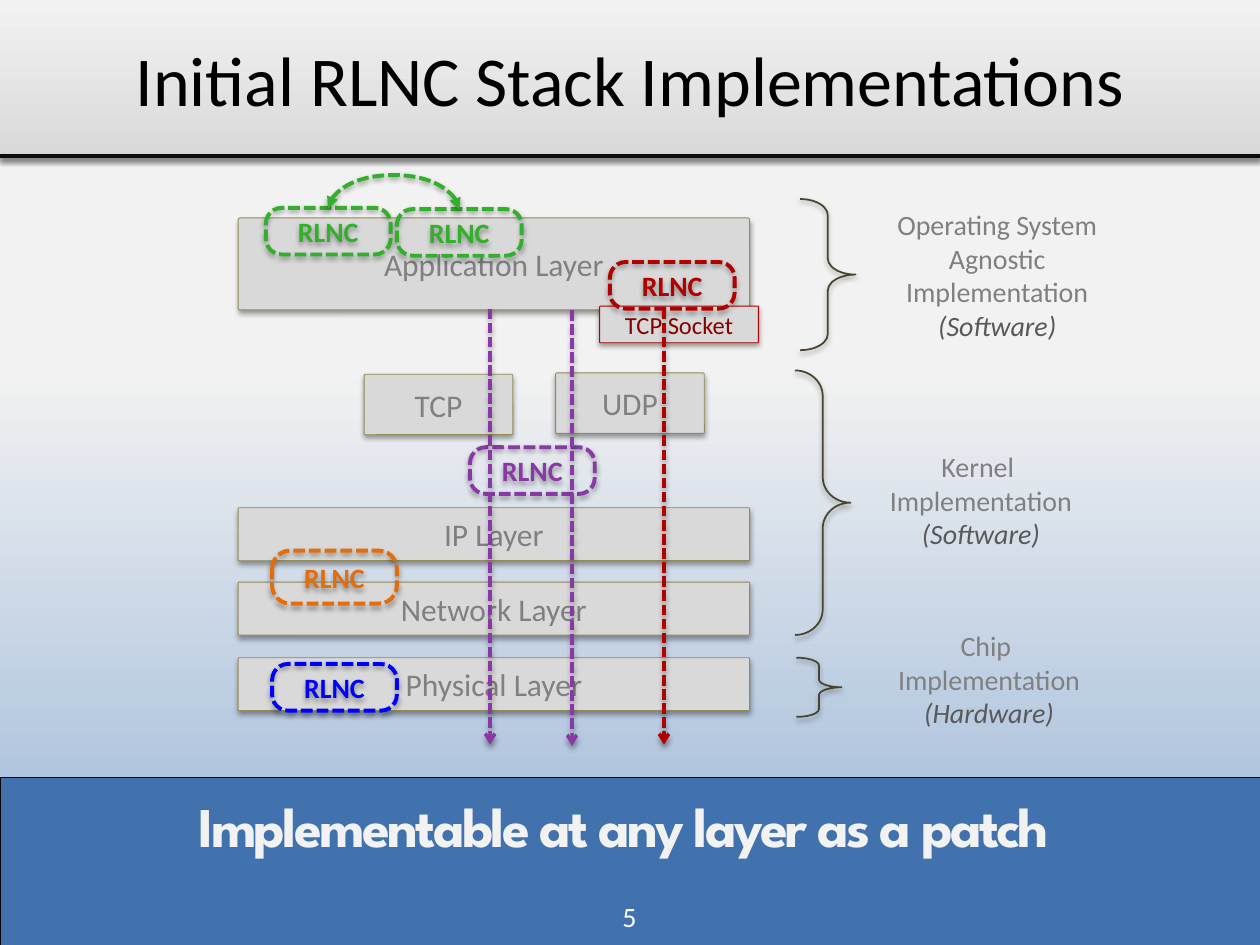
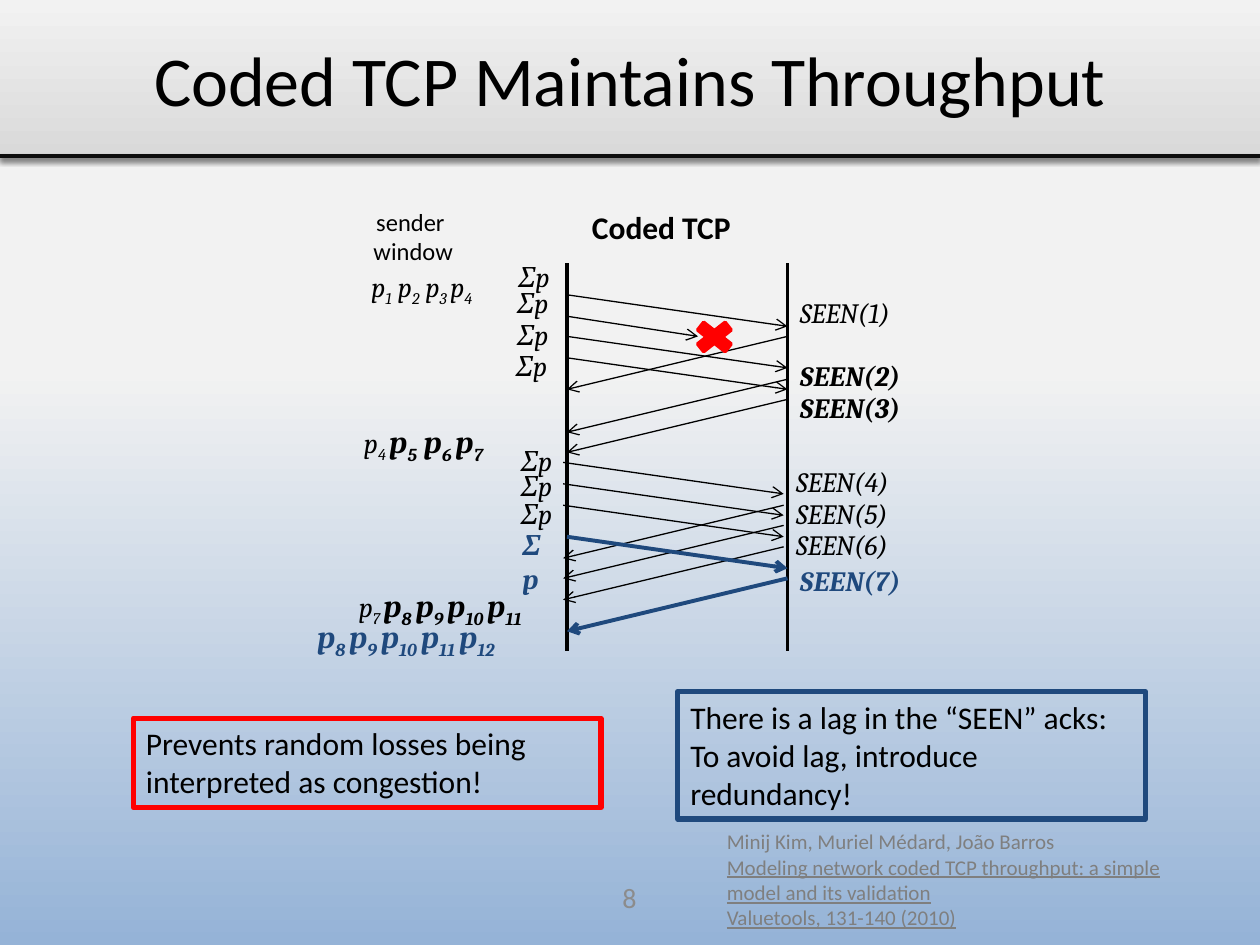
from dataclasses import dataclass

from lxml.etree import SubElement
from pptx import Presentation
from pptx.dml.color import RGBColor
from pptx.enum.dml import MSO_LINE
from pptx.enum.shapes import MSO_CONNECTOR, MSO_SHAPE
from pptx.enum.text import MSO_ANCHOR, PP_ALIGN
from pptx.oxml.ns import qn
from pptx.util import Inches, Pt


@dataclass(frozen=True)
class Theme:
    black: str = "000000"
    white: str = "FFFFFF"
    light: str = "F2F2F2"
    silver: str = "D9D9D9"
    sky: str = "95B3D7"
    rule: str = "0D0D0D"
    gray: str = "808080"
    dark_gray: str = "595959"
    page_gray: str = "8C8C8C"
    citation_gray: str = "7F7F7F"
    olive: str = "948A54"
    brace: str = "4A452A"
    banner: str = "4172AD"
    navy: str = "1F497D"
    red: str = "FF0000"
    crimson: str = "B00000"
    maroon: str = "850000"
    purple: str = "8938A6"
    orange: str = "E46C0A"
    green: str = "32B029"
    blue: str = "0000FF"
    sans: str = "Calibri"
    serif: str = "Cambria"
    display: str = "League Spartan"
    title_size: int = 40
    banner_size: int = 32
    large: int = 18
    medium: int = 16
    small: int = 14
    citation_size: int = 12


theme = Theme()


def outline(shape, color=None, width=1, dash=False, head=None, tail=None, shadow=False):
    if color:
        shape.line.color.rgb = RGBColor.from_string(color)
        shape.line.width = Pt(width)
    else:
        shape.line.fill.background()
    if dash:
        shape.line.dash_style = MSO_LINE.SQUARE_DOT
    properties = shape._element.spPr
    for tag, kind in (("a:headEnd", head), ("a:tailEnd", tail)):
        if kind:
            SubElement(properties.find(qn("a:ln")), qn(tag), type=kind)
    effects = SubElement(properties, qn("a:effectLst"))
    if shadow:
        cast = SubElement(effects, qn("a:outerShdw"), blurRad=str(Pt(3.1)),
                          dist=str(Pt(1.8)), dir="5400000", rotWithShape="0")
        tint = SubElement(cast, qn("a:srgbClr"), val=theme.black)
        SubElement(tint, qn("a:alpha"), val="36000")


def write(shape, text, size, color, font=theme.sans, bold=False, italic=False,
          align=PP_ALIGN.LEFT, anchor=MSO_ANCHOR.TOP, wrap=True):
    frame = shape.text_frame
    frame.word_wrap = wrap
    frame.vertical_anchor = anchor
    frame.text = text
    for paragraph in frame.paragraphs:
        paragraph.alignment = align
        for run in paragraph.runs:
            run.font.name = font
            run.font.size = Pt(size)
            run.font.bold = bold
            run.font.italic = italic
            run.font.color.rgb = RGBColor.from_string(color)


presentation = Presentation()
presentation.slide_width = Inches(10)
presentation.slide_height = Inches(7.5)
layout = presentation.slide_layouts[5]
stack_slide = presentation.slides.add_slide(layout)
tcp_slide = presentation.slides.add_slide(layout)

backdrop = []
for height, bottom_color, stop in ((7.5, theme.sky, 0.61), (1.25, theme.silver, 1)):
    band = stack_slide.shapes.add_shape(
        MSO_SHAPE.RECTANGLE, 0, 0, Inches(10), Inches(height))
    band.fill.gradient()
    band.fill.gradient_angle = 90
    first, last = band.fill.gradient_stops
    first.position, last.position = 0, stop
    first.color.rgb = RGBColor.from_string(bottom_color)
    last.color.rgb = RGBColor.from_string(theme.light)
    outline(band, shadow=True)
    backdrop.append(band)
header_rule = stack_slide.shapes.add_connector(
    MSO_CONNECTOR.STRAIGHT, 0, Inches(1.24), Inches(10), Inches(1.24))
outline(header_rule, theme.rule, 2, shadow=True)
backdrop.append(header_rule)
for position, shape in enumerate(backdrop, start=2):
    layout.shapes._spTree.insert(position, shape._element)

for slide, title in ((stack_slide, "Initial RLNC Stack Implementations"),
                     (tcp_slide, "Coded TCP Maintains Throughput")):
    shape = slide.shapes.title
    shape.left, shape.top = Inches(0.5), Inches(0)
    shape.width, shape.height = Inches(9), Inches(1.25)
    write(shape, title, theme.title_size, theme.black,
          align=PP_ALIGN.CENTER, anchor=MSO_ANCHOR.MIDDLE)

shapes = stack_slide.shapes
layers = (
    ("Application Layer", 1.89, 1.73, 4.06, 0.73),
    ("Physical Layer", 1.89, 5.22, 4.06, 0.42),
    ("Network Layer", 1.89, 4.62, 4.06, 0.42),
    ("IP Layer", 1.89, 4.03, 4.06, 0.42),
    ("UDP", 4.41, 2.96, 1.18, 0.48),
    ("TCP", 2.89, 2.97, 1.18, 0.48),
    ("TCP Socket", 4.76, 2.43, 1.26, 0.29),
)
for name, left, top, width, height in layers:
    layer = shapes.add_shape(MSO_SHAPE.ROUNDED_RECTANGLE, Inches(left), Inches(top),
                             Inches(width), Inches(height))
    layer.adjustments[0] = 0.02
    layer.fill.solid()
    layer.fill.fore_color.rgb = RGBColor.from_string(theme.silver)
    is_socket = name == "TCP Socket"
    outline(layer, theme.crimson if is_socket else theme.olive, 0.5, shadow=True)
    write(layer, name, theme.small if is_socket else theme.large,
          theme.maroon if is_socket else theme.gray,
          align=PP_ALIGN.CENTER, anchor=MSO_ANCHOR.MIDDLE)

coders = (
    (3.73, 3.55, 0.37, theme.purple),
    (2.16, 4.37, 0.42, theme.orange),
    (4.84, 2.08, 0.37, theme.crimson),
    (2.11, 1.65, 0.37, theme.green),
    (3.15, 1.66, 0.37, theme.green),
    (2.16, 5.27, 0.37, theme.blue),
)
for left, top, height, color in coders:
    coder = shapes.add_shape(MSO_SHAPE.ROUNDED_RECTANGLE, Inches(left), Inches(top),
                             Inches(0.99), Inches(height))
    coder.adjustments[0] = 0.34
    coder.fill.background()
    outline(coder, color, 2.25, dash=True, shadow=True)
    write(coder, "RLNC", theme.medium, color, bold=True,
          align=PP_ALIGN.CENTER, anchor=MSO_ANCHOR.MIDDLE)

exchange = shapes.add_connector(MSO_CONNECTOR.CURVE, Inches(3.12), Inches(1.14),
                                Inches(3.13), Inches(2.18))
transform = exchange._element.spPr.find(qn("a:xfrm"))
transform.set("rot", "16200000")
transform.set("flipH", "1")
guides = exchange._element.spPr.find(qn("a:prstGeom")).get_or_add_avLst()
SubElement(guides, qn("a:gd"), name="adj1", fmla="val -2700000")
outline(exchange, theme.green, 2.25, dash=True, head="triangle", tail="triangle", shadow=True)

for x, top, color in ((5.27, 2.45, theme.crimson), (4.54, 2.46, theme.purple),
                      (3.89, 2.45, theme.purple)):
    flow = shapes.add_connector(MSO_CONNECTOR.STRAIGHT, Inches(x), Inches(top),
                                Inches(x), Inches(top + 3.46))
    outline(flow, color, 2, dash=True, tail="arrow", shadow=True)

for left, top, width, height, curl in ((6.35, 1.58, 0.44, 1.2, 0.29),
                                       (6.32, 5.22, 0.36, 0.47, 0.17),
                                       (6.31, 2.94, 0.44, 2.1, 0.46)):
    brace = shapes.add_shape(MSO_SHAPE.RIGHT_BRACE, Inches(left), Inches(top),
                             Inches(width), Inches(height))
    brace.adjustments[0] = curl
    brace.fill.background()
    outline(brace, theme.brace, 1, shadow=True)

implementations = (
    ("Operating System Agnostic Implementation\n(Software)", 6.83, 1.6, 2.17, 1.18),
    ("Chip \nImplementation\n(Hardware)", 6.72, 4.94, 2.26, 0.91),
    ("Kernel \nImplementation\n(Software)", 6.7, 3.52, 2.17, 0.91),
)
for text, left, top, width, height in implementations:
    label = shapes.add_textbox(Inches(left), Inches(top), Inches(width), Inches(height))
    write(label, text, theme.medium, theme.gray, align=PP_ALIGN.CENTER)
    kind = label.text_frame.paragraphs[-1].runs[0]
    kind.font.italic = True
    kind.font.color.rgb = RGBColor.from_string(theme.dark_gray)

banner = shapes.add_shape(MSO_SHAPE.RECTANGLE, 0, Inches(6.17), Inches(10), Inches(1.33))
banner.fill.solid()
banner.fill.fore_color.rgb = RGBColor.from_string(theme.banner)
outline(banner, theme.black, 0.25)
message = shapes.add_textbox(0, Inches(5.92), Inches(10), Inches(1.25))
write(message, "Implementable at any layer as a patch ", theme.banner_size, theme.light,
      theme.display, bold=True, align=PP_ALIGN.CENTER, anchor=MSO_ANCHOR.MIDDLE)
message.text_frame.paragraphs[0].runs[0].font._element.set("spc", "-150")

shapes = tcp_slide.shapes
sender_x, receiver_x = 4.5, 6.25
for x in (sender_x, receiver_x):
    timeline = shapes.add_connector(MSO_CONNECTOR.STRAIGHT, Inches(x), Inches(2.09),
                                    Inches(x), Inches(5.17))
    outline(timeline, theme.black, 2.25)

transfers = [(sender_x, 2.51, 1.04, 0.16, theme.black, 0.75)]
for shift, sent, acknowledged, color, width in (
        (0, (2.34, 2.67, 2.84), (2.67, 3.01, 3.17), theme.black, 0.75),
        (-0.03, (3.67, 3.84, 4.01), (4.01, 4.17, 4.34), theme.black, 0.75),
        (0, (4.26,), (4.59,), theme.navy, 2.25)):
    for y in sent:
        transfers.append((sender_x + shift, y, 1.75, 0.25, color, width))
    for y in acknowledged:
        transfers.append((receiver_x + shift, y, -1.75, 0.42, color, width))
for x, y, run_length, drop, color, width in transfers:
    arrow = shapes.add_connector(MSO_CONNECTOR.STRAIGHT, Inches(x), Inches(y),
                                 Inches(x + run_length), Inches(y + drop))
    outline(arrow, color, width, tail="arrow")

loss = shapes.add_shape(MSO_SHAPE.MATH_MULTIPLY, Inches(5.46), Inches(2.51),
                        Inches(0.42), Inches(0.33))
loss.fill.solid()
loss.fill.fore_color.rgb = RGBColor.from_string(theme.red)
outline(loss, theme.red, 2)

heading = shapes.add_textbox(Inches(4.6), Inches(1.6), Inches(1.56), Inches(0.4))
write(heading, "Coded TCP", theme.large, theme.black, bold=True, wrap=False)
window_label = shapes.add_textbox(Inches(2.85), Inches(1.59), Inches(0.86), Inches(0.57))
write(window_label, "sender \vwindow", theme.small, theme.black,
      align=PP_ALIGN.CENTER, wrap=False)

for left, top in ((4.02, 2.01), (4.01, 2.22), (4.01, 2.47), (4, 2.72),
                  (4.04, 3.47), (4.04, 3.67), (4.04, 3.89), (4.05, 4.14)):
    is_extra = top == 4.14
    packet = shapes.add_textbox(Inches(left), Inches(top), Inches(0.45), Inches(0.37))
    write(packet, "Σp", theme.medium, theme.navy if is_extra else theme.black,
          theme.serif, bold=is_extra, italic=True, wrap=is_extra)

acks = ((6.25, 2.3), (6.25, 2.8), (6.25, 3.05), (6.22, 3.64),
        (6.22, 3.89), (6.22, 4.14), (6.25, 4.42))
for number, (left, top) in enumerate(acks, start=1):
    ack = shapes.add_textbox(Inches(left), Inches(top), Inches(1.05), Inches(0.37))
    write(ack, f"SEEN({number})", theme.medium, theme.navy if number == 7 else theme.black,
          theme.serif, bold=number in (2, 3, 7), italic=True, wrap=False)

windows = (
    (2.85, 2.09, 1.1, 0.37, theme.black, "p_1_ p_2_ p_3 _p_4", ""),
    (2.79, 3.3, 1.18, 0.4, theme.black, "p_4 ", "p_5_ p_6 _p_7"),
    (2.75, 4.6, 1.6, 0.4, theme.black, "p_7 ", "p_8 _p_9 _p_10 _p_11"),
    (2.42, 4.85, 1.66, 0.4, theme.navy, "", "p_8 _p_9 _p_10 _p_11 _p_12"),
)
for left, top, width, height, color, old_packets, new_packets in windows:
    window = shapes.add_textbox(Inches(left), Inches(top), Inches(width), Inches(height))
    window.text_frame.word_wrap = False
    paragraph = window.text_frame.paragraphs[0]
    for packets, size, bold in ((old_packets, theme.medium, False),
                                (new_packets, theme.large, True)):
        for index, part in enumerate(packets.split("_") if packets else ()):
            run = paragraph.add_run()
            run.text = part
            run.font.name = theme.serif
            run.font.size = Pt(size)
            run.font.bold = bold
            run.font.italic = True
            run.font.color.rgb = RGBColor.from_string(color)
            if index % 2:
                run.font._element.set("baseline", "-25000")

callouts = (
    ("Prevents random losses being interpreted as congestion!", 1.06, 5.7, 0.71, theme.red),
    ("There is a lag in the “SEEN” acks: To avoid lag, introduce redundancy!",
     5.38, 5.49, 1.01, theme.navy),
)
for text, left, top, height, color in callouts:
    callout = shapes.add_shape(MSO_SHAPE.RECTANGLE, Inches(left), Inches(top),
                               Inches(3.71), Inches(height))
    callout.fill.background()
    outline(callout, color, 3)
    write(callout, text, theme.large, theme.black)

citation = shapes.add_textbox(Inches(5.67), Inches(6.53), Inches(4.17), Inches(0.91))
write(citation, "Minij Kim, Muriel Médard, João Barros\n"
      "Modeling network coded TCP throughput: a simple\n"
      "model and its validation\n"
      "Valuetools, 131-140 (2010)", theme.citation_size, theme.citation_gray)
for paragraph in citation.text_frame.paragraphs[1:]:
    paragraph.runs[0].font.underline = True

for slide, number, top, color in ((stack_slide, "5", 7.07, theme.white),
                                  (tcp_slide, "8", 6.92, theme.page_gray)):
    page = slide.shapes.add_textbox(Inches(3.83), Inches(top), Inches(2.33), Inches(0.4))
    write(page, number, theme.medium, color,
          align=PP_ALIGN.CENTER, anchor=MSO_ANCHOR.MIDDLE)

presentation.save("out.pptx")
